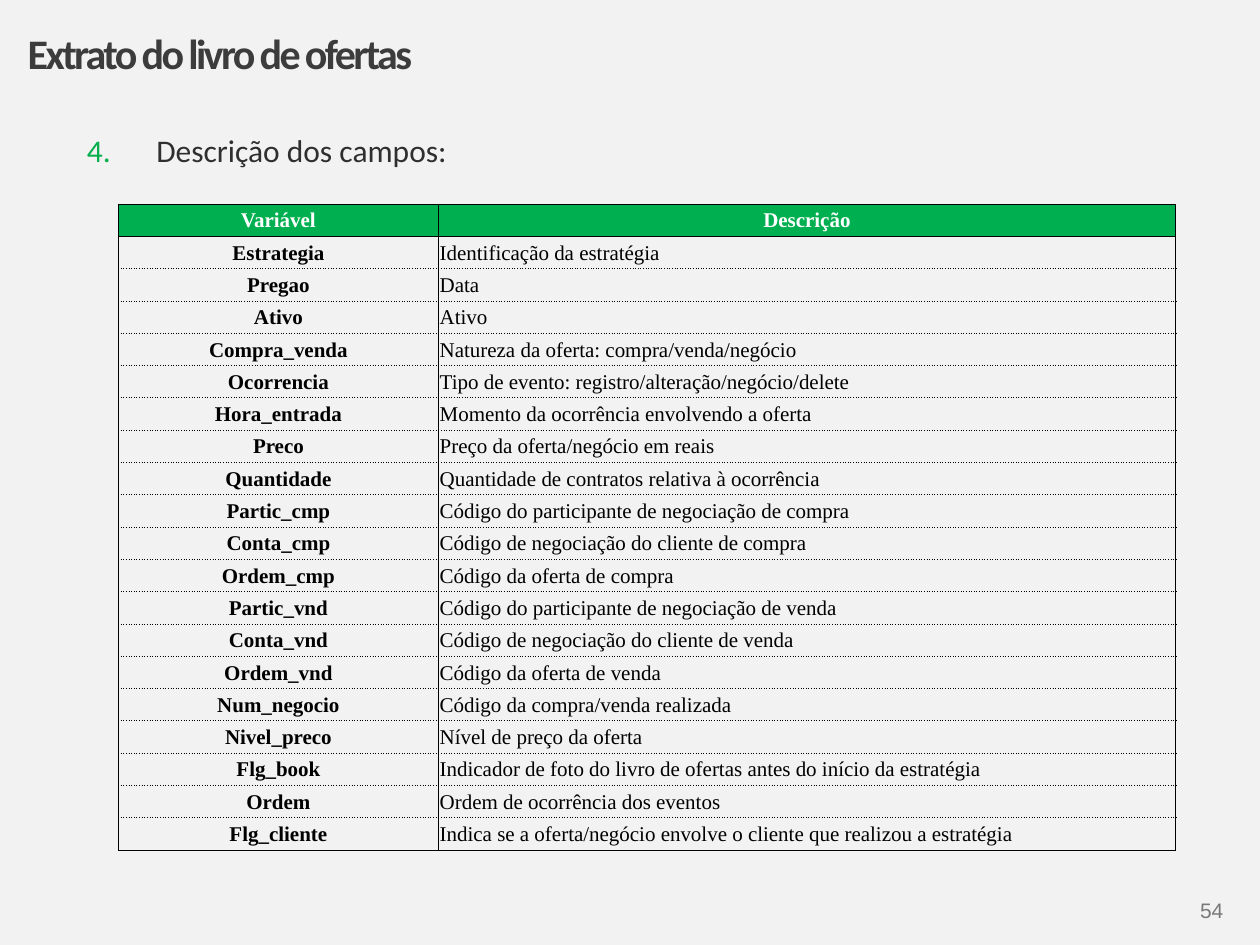
from lxml import etree
from pptx import Presentation
from pptx.dml.color import RGBColor
from pptx.enum import text as text_enum
from pptx.oxml import parse_xml
from pptx.oxml.ns import nsdecls, qn
from pptx.util import Inches, Pt

ALIGN = text_enum.PP_ALIGN
ANCHOR = text_enum.MSO_ANCHOR

COLORS = {
    "background": "F2F2F2",
    "title": "3C3C3C",
    "body": "2F2F2F",
    "number": "04AE4D",
    "header": "00B050",
    "white": "FFFFFF",
    "black": "000000",
    "page_number": "797979",
}

HEADER = ("Variável", "Descrição")
FIELDS = [
    ("Estrategia", "Identificação da estratégia"),
    ("Pregao", "Data"),
    ("Ativo", "Ativo"),
    ("Compra_venda", "Natureza da oferta: compra/venda/negócio"),
    ("Ocorrencia", "Tipo de evento: registro/alteração/negócio/delete"),
    ("Hora_entrada", "Momento da ocorrência envolvendo a oferta"),
    ("Preco", "Preço da oferta/negócio em reais"),
    ("Quantidade", "Quantidade de contratos relativa à ocorrência"),
    ("Partic_cmp", "Código do participante de negociação de compra"),
    ("Conta_cmp", "Código de negociação do cliente de compra"),
    ("Ordem_cmp", "Código da oferta de compra"),
    ("Partic_vnd", "Código do participante de negociação de venda"),
    ("Conta_vnd", "Código de negociação do cliente de venda"),
    ("Ordem_vnd", "Código da oferta de venda"),
    ("Num_negocio", "Código da compra/venda realizada"),
    ("Nivel_preco", "Nível de preço da oferta"),
    ("Flg_book", "Indicador de foto do livro de ofertas antes do início da estratégia"),
    ("Ordem", "Ordem de ocorrência dos eventos"),
    ("Flg_cliente", "Indica se a oferta/negócio envolve o cliente que realizou a estratégia"),
]


def rgb(name):
    return RGBColor.from_string(COLORS[name])


def write(frame, text, *, font, size, color, bold=False, align=ALIGN.LEFT, spacing=None):
    """Put one formatted paragraph in a text frame and return it."""
    para = frame.paragraphs[0]
    para.alignment = align
    para.space_before = Pt(0)
    span = para.add_run()
    span.text = text
    span.font.name = font
    span.font.size = Pt(size)
    span.font.bold = bold
    span.font.color.rgb = rgb(color)
    if spacing is not None:
        span.font._element.set("spc", str(int(spacing * 100)))
    return para


def number_paragraph(para, start, color, indent):
    """Give a paragraph an automatic number with a hanging indent."""
    props = para._p.get_or_add_pPr()
    props.set("marL", str(indent))
    props.set("indent", str(-indent))
    bullet_color = etree.SubElement(props, qn("a:buClr"))
    etree.SubElement(bullet_color, qn("a:srgbClr"), val=COLORS[color])
    etree.SubElement(props, qn("a:buFont"), typeface="+mj-lt")
    etree.SubElement(props, qn("a:buAutoNum"), type="arabicPeriod", startAt=str(start))


def set_borders(cell, top, bottom):
    """Draw thin borders: solid sides, and the given dash above and below."""
    props = cell._tc.get_or_add_tcPr()
    for side, dash in (("L", "solid"), ("R", "solid"), ("T", top), ("B", bottom)):
        props.append(parse_xml(
            f'<a:ln{side} {nsdecls("a")} w="{Pt(0.5)}"><a:solidFill>'
            f'<a:srgbClr val="{COLORS["black"]}"/></a:solidFill>'
            f'<a:prstDash val="{dash}"/></a:ln{side}>'))


class SlideBuilder:
    text_font = "Calibri"
    table_font = "Times New Roman"
    number_font = "Arial"

    def __init__(self, deck):
        self.page = deck.slides.add_slide(deck.slide_layouts[1])
        fill = self.page.background.fill
        fill.solid()
        fill.fore_color.rgb = rgb("background")

    def place(self, box, left, top, width, height):
        box.left, box.top = Inches(left), Inches(top)
        box.width, box.height = Inches(width), Inches(height)
        return box.text_frame

    def title(self, text, *area):
        frame = self.place(self.page.shapes.title, *area)
        frame.vertical_anchor = ANCHOR.MIDDLE
        write(frame, text, font=self.text_font, size=24, color="title",
              bold=True, spacing=-1.5)

    def numbered_item(self, text, start, *area):
        frame = self.place(self.page.placeholders[1], *area)
        para = write(frame, text, font=self.text_font, size=18, color="body")
        number_paragraph(para, start, "number", Inches(0.55))

    def page_number(self, text, *area):
        box = self.page.shapes.add_textbox(*map(Inches, area))
        frame = box.text_frame
        frame.margin_left = frame.margin_right = 0
        frame.margin_top = frame.margin_bottom = 0
        frame.word_wrap = False
        write(frame, text, font=self.number_font, size=12, color="page_number",
              align=ALIGN.RIGHT)

    def field_table(self, rows, left, top, widths, row_height):
        area = map(Inches, (left, top, sum(widths), row_height * len(rows)))
        table = self.page.shapes.add_table(len(rows), len(widths), *area).table
        table.first_row = table.horz_banding = False
        for column, width in zip(table.columns, widths):
            column.width = Inches(width)
        last = len(rows) - 1
        for r, row in enumerate(rows):
            table.rows[r].height = Inches(row_height)
            for c, text in enumerate(row):
                self.table_cell(table.cell(r, c), text, header=r == 0, key=c == 0,
                                top="solid" if r <= 1 else "sysDot",
                                bottom="solid" if r in (0, last) else "sysDot")

    def table_cell(self, cell, text, header, key, top, bottom):
        cell.margin_left = cell.margin_right = cell.margin_top = Inches(0.01)
        cell.margin_bottom = 0
        cell.vertical_anchor = ANCHOR.MIDDLE
        set_borders(cell, top, bottom)
        if header:
            cell.fill.solid()
            cell.fill.fore_color.rgb = rgb("header")
        else:
            cell.fill.background()
        write(cell.text_frame, text, font=self.table_font, size=12,
              color="white" if header else "black", bold=header or key,
              align=ALIGN.CENTER if header or key else ALIGN.JUSTIFY)


def main():
    deck = Presentation()
    deck.slide_width, deck.slide_height = Inches(10), Inches(7.5)
    slide = SlideBuilder(deck)
    slide.page_number("54", 9.44, 7.12, 0.27, 0.2)
    slide.title("Extrato do livro de ofertas", 0.12, 0, 7.56, 0.84)
    slide.numbered_item("Descrição dos campos:", 4, 0.59, 0.99, 8.59, 0.4)
    slide.field_table([HEADER, *FIELDS], 0.94, 1.62, (2.54, 5.85), 5.13 / 20)
    deck.save("out.pptx")


if __name__ == "__main__":
    main()
